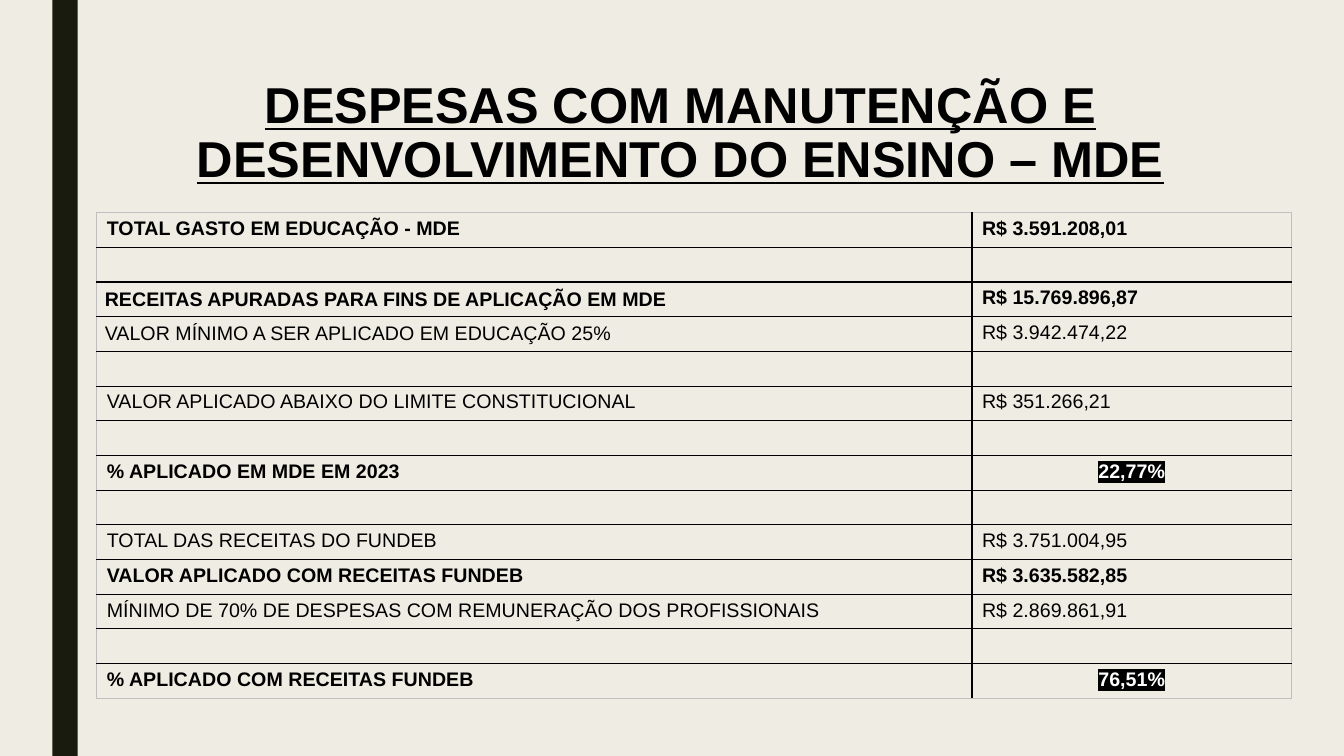
"""Build the slide on education maintenance and development spending."""
from lxml import etree
from pptx import Presentation
from pptx.dml.color import RGBColor
from pptx.enum.shapes import MSO_SHAPE
from pptx.enum.text import MSO_ANCHOR, PP_ALIGN
from pptx.oxml.ns import qn
from pptx.util import Inches, Pt

RECTANGLE = MSO_SHAPE.RECTANGLE
TOP, MIDDLE = MSO_ANCHOR.TOP, MSO_ANCHOR.MIDDLE
LEFT, CENTER = PP_ALIGN.LEFT, PP_ALIGN.CENTER

FONT = "Arial"
BACKGROUND, BAR, BLACK, WHITE, FRAME = "EFEDE3", "191B0E", "000000", "FFFFFF", "BFBFBF"

TITLE = "DESPESAS COM MANUTENÇÃO E DESENVOLVIMENTO DO ENSINO – MDE"
BLANK_ROW = ("", "", False)
EXPENSES = [
    ("TOTAL GASTO EM EDUCAÇÃO - MDE", "R$ 3.591.208,01", True),
    BLANK_ROW,
    ("RECEITAS APURADAS PARA FINS DE APLICAÇÃO EM MDE", "R$ 15.769.896,87", True),
    ("VALOR MÍNIMO A SER APLICADO EM EDUCAÇÃO 25%", "R$ 3.942.474,22", False),
    BLANK_ROW,
    ("VALOR APLICADO ABAIXO DO LIMITE CONSTITUCIONAL", "R$ 351.266,21", False),
    BLANK_ROW,
    ("% APLICADO EM MDE EM 2023", "22,77%", True),
    BLANK_ROW,
    ("TOTAL DAS RECEITAS DO FUNDEB", "R$ 3.751.004,95", False),
    ("VALOR APLICADO COM RECEITAS FUNDEB", "R$ 3.635.582,85", True),
    ("MÍNIMO DE 70% DE DESPESAS COM REMUNERAÇÃO DOS PROFISSIONAIS", "R$ 2.869.861,91", False),
    BLANK_ROW,
    ("% APLICADO COM RECEITAS FUNDEB", "76,51%", True),
]
MIDDLE_LABEL_ROWS = (2, 3)
COLUMN_WIDTHS = (8.68, 3.17)
TABLE_LEFT, TABLE_TOP, TABLE_HEIGHT = 0.96, 2.11, 4.82


def color(value):
    return RGBColor.from_string(value)


def style(paragraph, size, bold, align):
    paragraph.alignment = align
    font = paragraph.font
    font.name, font.size, font.bold = FONT, Pt(size), bold
    font.color.rgb = color(BLACK)


def add_solid(parent, tag, value):
    fill = etree.SubElement(parent, qn(tag))
    etree.SubElement(fill, qn("a:srgbClr"), val=value)


def add_border(cell, side, value, width):
    line = etree.SubElement(cell._tc.get_or_add_tcPr(), qn(f"a:ln{side}"), w=str(Pt(width)))
    add_solid(line, "a:solidFill", value)


def highlight(run):
    run.font.color.rgb = color(WHITE)
    add_solid(run.font._element, "a:highlight", BLACK)


def fill_cell(cell, text, bold, outer_sides):
    for side in "LRTB":
        outer = side in outer_sides
        add_border(cell, side, FRAME if outer else BLACK, 0.75 if outer else 1)
    cell.fill.background()
    if not text:
        cell.margin_top = cell.margin_bottom = 0
        return
    percentage = text.endswith("%") and len(text) < 7
    paragraph = cell.text_frame.paragraphs[0]
    run = paragraph.add_run()
    run.text = text
    style(paragraph, 14, bold, CENTER if percentage else LEFT)
    if percentage:
        highlight(run)


def add_title(slide):
    frame = slide.shapes.add_textbox(Inches(1.5), Inches(0.75), Inches(10.5), Inches(1.62)).text_frame
    frame.word_wrap = True
    frame.vertical_anchor = TOP
    paragraph = frame.paragraphs[0]
    paragraph.text = TITLE
    paragraph.line_spacing = 0.89
    style(paragraph, 36, True, CENTER)
    paragraph.font.underline = True


def add_expenses(slide):
    last = len(EXPENSES) - 1
    table = slide.shapes.add_table(
        len(EXPENSES), 2, Inches(TABLE_LEFT), Inches(TABLE_TOP),
        Inches(sum(COLUMN_WIDTHS)), Inches(TABLE_HEIGHT)).table
    table.first_row = table.horz_banding = False
    for column, width in zip(table.columns, COLUMN_WIDTHS):
        column.width = Inches(width)
    for index, (label, amount, bold) in enumerate(EXPENSES):
        edge = "T" if index == 0 else "B" if index == last else ""
        fill_cell(table.cell(index, 0), label, bold, "L" + edge)
        fill_cell(table.cell(index, 1), amount, bold, "R" + edge)
    for index in MIDDLE_LABEL_ROWS:
        label_cell = table.cell(index, 0)
        label_cell.vertical_anchor = MIDDLE
        label_cell.margin_left = label_cell.margin_right = Inches(0.08)
        label_cell.margin_top = label_cell.margin_bottom = Inches(0.04)


def main():
    deck = Presentation()
    deck.slide_width, deck.slide_height = Inches(13.33), Inches(7.5)
    slide = deck.slides.add_slide(deck.slide_layouts[6])
    slide.background.fill.solid()
    slide.background.fill.fore_color.rgb = color(BACKGROUND)

    bar = slide.shapes.add_shape(RECTANGLE, Inches(0.52), 0, Inches(0.25), deck.slide_height)
    bar.shadow.inherit = False
    bar.fill.solid()
    bar.fill.fore_color.rgb = color(BAR)
    bar.line.fill.background()

    add_title(slide)
    add_expenses(slide)
    deck.save("out.pptx")


if __name__ == "__main__":
    main()
